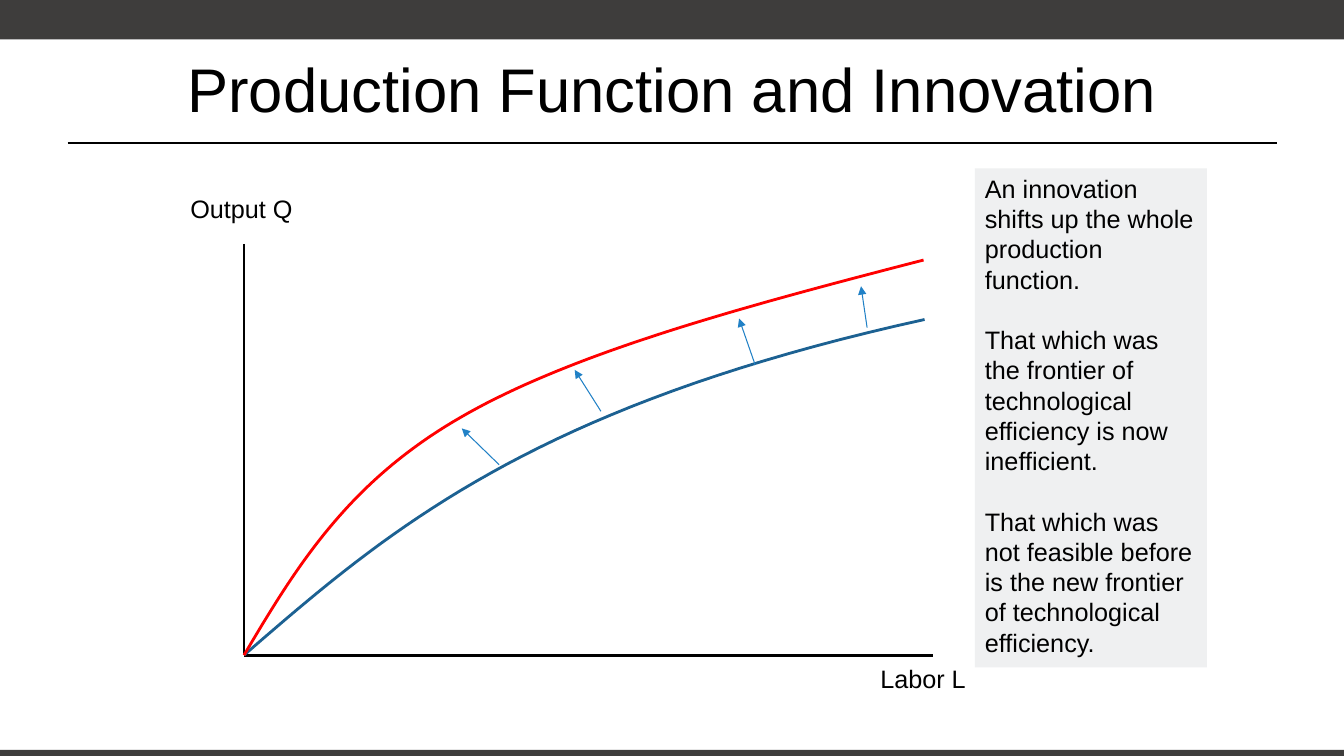
from lxml import etree
from pptx import Presentation
from pptx.dml.color import RGBColor
from pptx.enum.shapes import MSO_CONNECTOR, MSO_SHAPE
from pptx.enum.text import MSO_ANCHOR as ANCHOR, PP_ALIGN as ALIGN
from pptx.oxml.ns import qn
from pptx.util import Inches, Pt

COLORS = {"bar": "3E3D3C", "ink": "000000", "panel": "EFF0F1",
          "before": "1C6192", "after": "FF0000", "shift": "2181C6"}

TITLE = "Production Function and Innovation"
NOTES = [
    "An innovation shifts up the whole production function.",
    "That which was the frontier of technological efficiency is now inefficient.",
    "That which was not feasible before is the new frontier of technological efficiency.",
]
AXIS_LABELS = [("Labor L", (8.62, 6.53, 1.07, 0.4)),
               ("Output Q", (1.78, 1.87, 1.23, 0.4))]

BARS = [(0, 0, 13.33, 0.39), (0, 7.44, 13.33, 0.06)]
TITLE_BOX = (0.67, 0.25, 12, 1.25)
PANEL_BOX = (9.67, 1.67, 2.3, 4.95)

ORIGIN = (2.42, 6.5)
RULE = ((0.67, 1.42), (12.67, 1.42))
AXES = [((2.42, 2.42), ORIGIN), (ORIGIN, (9.25, 6.5))]
# Each curve starts at the origin; a segment is two control points and an end.
CURVES = [
    ("before", [((3.85, 5.26), (5.27, 4.03), (9.17, 3.17))]),
    ("after", [((2.93, 5.64), (3.44, 4.79), (4.57, 4.14)),
               ((5.69, 3.49), (7.42, 3.03), (9.16, 2.58))]),
]
SHIFT_ARROWS = [((8.6, 3.25), (8.54, 2.84)), ((5.96, 4.08), (5.7, 3.67)),
                ((4.95, 4.61), (4.58, 4.25)), ((7.49, 3.62), (7.33, 3.16))]
CURVE_STEPS = 40
LINE_PITCH = Pt(21.6)


def rgb(name):
    return RGBColor.from_string(COLORS[name])


def inches(values):
    return [Inches(v) for v in values]


def add_rect(slide, box, color):
    sp = slide.shapes.add_shape(MSO_SHAPE.RECTANGLE, *inches(box))
    sp.shadow.inherit = False
    sp.fill.solid()
    sp.fill.fore_color.rgb = rgb(color)
    sp.line.fill.background()
    return sp


def add_line(slide, start, end, color, width, arrow=False):
    line = slide.shapes.add_connector(MSO_CONNECTOR.STRAIGHT, *inches(start + end))
    line.line.color.rgb = rgb(color)
    line.line.width = Pt(width)
    if arrow:
        etree.SubElement(line.line._get_or_add_ln(), qn("a:tailEnd"), type="triangle")
    etree.SubElement(line._element.spPr, qn("a:effectLst"))


def bezier_points(start, c1, c2, end):
    """Return evenly stepped points of a cubic curve, without its start."""
    points = []
    for i in range(1, CURVE_STEPS + 1):
        t = i / CURVE_STEPS
        u = 1 - t
        weights = (u ** 3, 3 * u * u * t, 3 * u * t * t, t ** 3)
        points.append(inches(sum(w * v for w, v in zip(weights, axis))
                             for axis in zip(start, c1, c2, end)))
    return points


def add_curve(slide, segments, color):
    points, start = [], ORIGIN
    for segment in segments:
        points += bezier_points(start, *segment)
        start = segment[-1]
    builder = slide.shapes.build_freeform(*inches(ORIGIN))
    builder.add_line_segments(points, close=False)
    sp = builder.convert_to_shape()
    sp.shadow.inherit = False
    sp.fill.background()
    sp.line.color.rgb = rgb(color)
    sp.line.width = Pt(2)


def write(sp, paragraphs, size=18, wrap=True, anchor=ANCHOR.TOP, **paragraph_format):
    tf = sp.text_frame
    tf.word_wrap = wrap
    tf.vertical_anchor = anchor
    for i, text in enumerate(paragraphs):
        p = tf.add_paragraph() if i else tf.paragraphs[0]
        for name, value in paragraph_format.items():
            setattr(p, name, value)
        r = p.add_run()
        r.text = text
        for name, value in {"name": "Arial", "size": Pt(size)}.items():
            setattr(r.font, name, value)
        r.font.color.rgb = rgb("ink")
    return tf


def main():
    prs = Presentation()
    prs.slide_width, prs.slide_height = inches((13.33, 7.5))
    slide = prs.slides.add_slide(prs.slide_layouts[6])

    for box in BARS:
        add_rect(slide, box, "bar")
    add_line(slide, *RULE, "ink", 1.25)
    title = slide.shapes.add_textbox(*inches(TITLE_BOX))
    write(title, [TITLE], size=44, anchor=ANCHOR.MIDDLE, alignment=ALIGN.CENTER)

    for start, end in AXES:
        add_line(slide, start, end, "ink", 2)
    for text, box in AXIS_LABELS:
        label = slide.shapes.add_textbox(*inches(box))
        write(label, [text], wrap=False, alignment=ALIGN.CENTER)
    for color, segments in CURVES:
        add_curve(slide, segments, color)
    for start, end in SHIFT_ARROWS:
        add_line(slide, start, end, "shift", 0.75, arrow=True)

    panel = add_rect(slide, PANEL_BOX, "panel")
    tf = write(panel, NOTES, alignment=ALIGN.LEFT, line_spacing=LINE_PITCH)
    for p in tf.paragraphs[1:]:
        p.space_before = LINE_PITCH

    prs.save("out.pptx")


if __name__ == "__main__":
    main()
